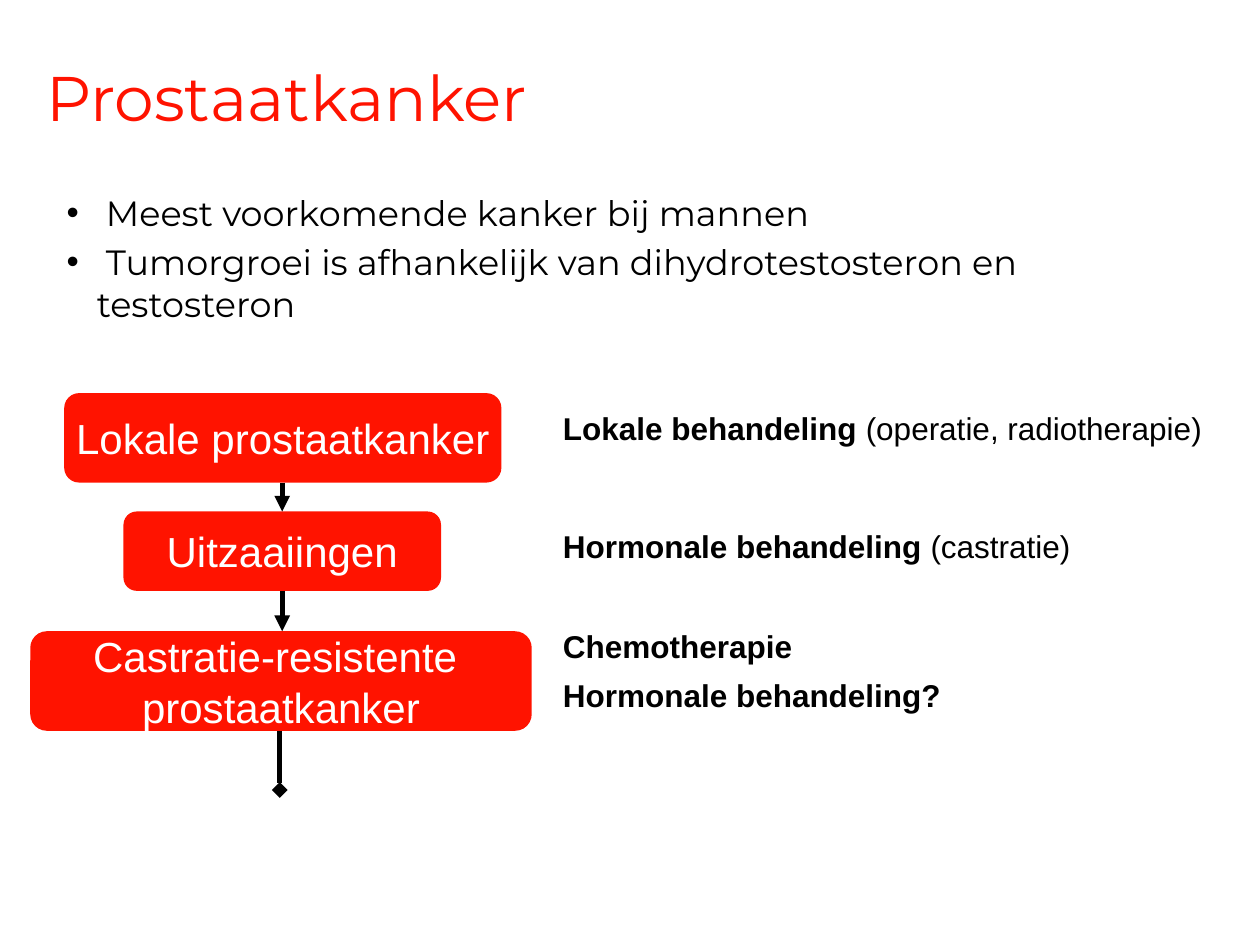
from lxml import etree
from pptx import Presentation
from pptx.dml.color import RGBColor
from pptx.enum.shapes import MSO_CONNECTOR, MSO_SHAPE
from pptx.enum.text import MSO_ANCHOR, PP_ALIGN
from pptx.oxml.ns import qn
from pptx.util import Inches, Pt

ROUNDED = MSO_SHAPE.ROUNDED_RECTANGLE
STRAIGHT = MSO_CONNECTOR.STRAIGHT
MIDDLE = MSO_ANCHOR.MIDDLE
CENTER = PP_ALIGN.CENTER
RED, BLACK, WHITE = "FF1300", "000000", "FFFFFF"


def color(value):
    return RGBColor.from_string(value)


def set_font(font, name, size, value):
    font.name = name
    font.size = Pt(size)
    font.color.rgb = color(value)


deck = Presentation()
deck.slide_width = Inches(10)
deck.slide_height = Inches(7.5)
page = deck.slides.add_slide(deck.slide_layouts[6])

# Title
box = page.shapes.add_textbox(Inches(0.27), Inches(0.21), Inches(9.06), Inches(1.25))
box.text_frame.word_wrap = True
box.text_frame.vertical_anchor = MIDDLE
para = box.text_frame.paragraphs[0]
para.text = "Prostaatkanker"
para.line_spacing = 0.7
set_font(para.font, "Montserrat", 36, RED)

# Bullets
bullets = [
    " Meest voorkomende kanker bij mannen",
    " Tumorgroei is afhankelijk van dihydrotestosteron en testosteron",
]
box = page.shapes.add_textbox(Inches(0.43), Inches(1.47), Inches(8.74), Inches(0.84))
frame = box.text_frame
frame.word_wrap = True
for index, text in enumerate(bullets):
    para = frame.paragraphs[0] if index == 0 else frame.add_paragraph()
    para.text = text
    if index:
        para.space_before = Pt(4)
    properties = para._p.get_or_add_pPr()
    properties.set("marL", str(Inches(0.24)))
    properties.set("indent", str(-Inches(0.24)))
    etree.SubElement(properties, qn("a:buFont")).set("typeface", "Arial")
    etree.SubElement(properties, qn("a:buChar")).set("char", "•")
    set_font(para.font, "Montserrat", 20, BLACK)

# Disease stages: left, top, width, height, lines
stages = [
    (0.51, 3.12, 3.47, 0.71, ["Lokale prostaatkanker"]),
    (0.98, 4.06, 2.52, 0.63, ["Uitzaaiingen"]),
    (0.24, 5.01, 3.98, 0.79, ["Castratie-resistente ", "prostaatkanker"]),
]
for left, top, width, height, lines in stages:
    stage = page.shapes.add_shape(
        ROUNDED, Inches(left), Inches(top), Inches(width), Inches(height))
    stage.shadow.inherit = False
    stage.fill.solid()
    stage.fill.fore_color.rgb = color(RED)
    stage.line.fill.background()
    frame = stage.text_frame
    frame.word_wrap = False
    frame.vertical_anchor = MIDDLE
    for index, text in enumerate(lines):
        para = frame.paragraphs[0] if index == 0 else frame.add_paragraph()
        para.text = text
        para.alignment = CENTER
        set_font(para.font, "Arial", 24, WHITE)

# Arrows between and below the stages: x, top, bottom, arrowhead
arrows = [
    (2.24, 3.83, 4.06, "triangle"),
    (2.24, 4.69, 5.01, "triangle"),
    (2.22, 5.8, 6.27, "diamond"),
]
for x, top, bottom, head in arrows:
    arrow = page.shapes.add_connector(
        STRAIGHT, Inches(x), Inches(top), Inches(x), Inches(bottom))
    arrow.line.color.rgb = color(BLACK)
    arrow.line.width = Pt(3)
    etree.SubElement(arrow.line._get_or_add_ln(), qn("a:tailEnd")).set("type", head)
    etree.SubElement(arrow._element.spPr, qn("a:effectLst"))

# Treatments: top, bold text, plain text
treatments = [
    (3.2, "Lokale behandeling", " (operatie, radiotherapie)"),
    (4.14, "Hormonale behandeling ", "(castratie)"),
    (4.93, "Chemotherapie", ""),
    (5.32, "Hormonale behandeling?", ""),
]
for top, strong, plain in treatments:
    box = page.shapes.add_textbox(Inches(4.37), Inches(top), Inches(5.5), Inches(0.39))
    box.text_frame.word_wrap = True
    box.text_frame.vertical_anchor = MIDDLE
    para = box.text_frame.paragraphs[0]
    set_font(para.font, "Arial", 18, BLACK)
    span = para.add_run()
    span.text = strong
    span.font.bold = True
    if plain:
        para.add_run().text = plain

deck.save("out.pptx")
